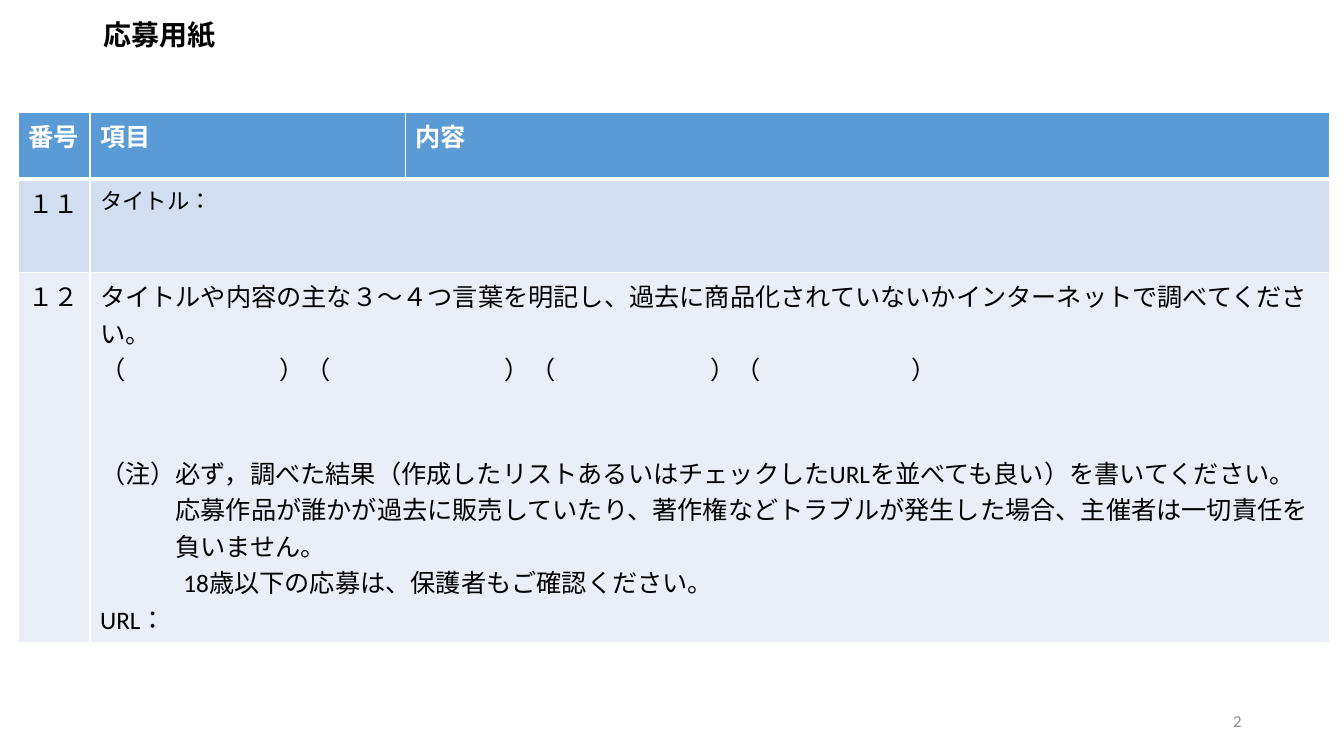
from lxml import etree
from pptx import Presentation
from pptx.dml.color import RGBColor
from pptx.enum.lang import MSO_LANGUAGE_ID
from pptx.enum.text import MSO_ANCHOR, PP_ALIGN
from pptx.oxml.ns import qn
from pptx.util import Cm, Pt

TOP, MIDDLE = MSO_ANCHOR.TOP, MSO_ANCHOR.MIDDLE
LEFT, RIGHT = PP_ALIGN.LEFT, PP_ALIGN.RIGHT
JAPANESE = MSO_LANGUAGE_ID.JAPANESE

HEADINGS = ["番号", "項目", "内容"]
KEYWORD_TABS = [4.53, 10.2, 15.37, 20.45]
KEYWORD_BLANKS = "（\t）" * len(KEYWORD_TABS)
# Text, left indent in cm, space before in points
INSTRUCTIONS = [
    ("タイトルや内容の主な３～４つ言葉を明記し、過去に商品化されていないか"
     "インターネットで調べてください。", 0, 0),
    (KEYWORD_BLANKS, 0, 0),
    ("（注）必ず，調べた結果（作成したリストあるいはチェックしたURLを"
     "並べても良い）を書いてください。", 0, 48),
    ("応募作品が誰かが過去に販売していたり、著作権などトラブルが発生した場合、"
     "主催者は一切責任を", 1.9, 0),
    ("負いません。", 1.9, 0),
    ("18歳以下の応募は、保護者もご確認ください。", 2.1, 0),
    ("URL：", 0, 0),
]


def color(hex_value):
    return RGBColor.from_string(hex_value)


def write(paragraph, text, size, ink="000000", bold=False):
    paragraph.text = text
    for run in paragraph.runs:
        font = run.font
        font.name = "Calibri"
        font.size = Pt(size)
        font.bold = bold
        font.color.rgb = color(ink)
        font.language_id = JAPANESE


def add_label(slide, box, text, size, ink, bold, anchor, align):
    label = slide.shapes.add_textbox(*(Cm(length) for length in box))
    frame = label.text_frame
    frame.word_wrap = True
    frame.vertical_anchor = anchor
    paragraph = frame.paragraphs[0]
    paragraph.alignment = align
    write(paragraph, text, size, ink, bold)
    return paragraph


def fill_cell(cell, fill, text, size=18, ink="000000", bold=False):
    cell.fill.solid()
    cell.fill.fore_color.rgb = color(fill)
    write(cell.text_frame.paragraphs[0], text, size, ink, bold)


def set_borders(cell, top, bottom):
    properties = cell._tc.get_or_add_tcPr()
    sides = [("a:lnL", 1), ("a:lnR", 1), ("a:lnT", top), ("a:lnB", bottom)]
    for position, (side, width) in enumerate(sides):
        line = etree.Element(qn(side), w=str(Pt(width)))
        paint = etree.SubElement(line, qn("a:solidFill"))
        etree.SubElement(paint, qn("a:srgbClr"), val="FFFFFF")
        properties.insert(position, line)


def add_tabs(paragraph, stops):
    tab_list = etree.SubElement(paragraph._p.get_or_add_pPr(), qn("a:tabLst"))
    for stop in stops:
        etree.SubElement(tab_list, qn("a:tab"), pos=str(Cm(stop)), algn="l")


def write_instructions(frame):
    for index, (text, indent, gap) in enumerate(INSTRUCTIONS):
        paragraph = frame.add_paragraph() if index else frame.paragraphs[0]
        if text == KEYWORD_BLANKS:
            add_tabs(paragraph, KEYWORD_TABS)
        if indent:
            paragraph._p.get_or_add_pPr().set("marL", str(Cm(indent)))
        if gap:
            paragraph.space_before = Pt(gap)
        write(paragraph, text, 18)


def add_entry_form(slide, box):
    left, top, width, height = box
    form = slide.shapes.add_table(3, 3, Cm(left), Cm(top), Cm(width), Cm(height)).table
    form.horz_banding = False
    column_widths = [1.8, 7.95, width - 9.75]
    row_heights = [1.68, 2.36, height - 4.04]
    for column, column_width in zip(form.columns, column_widths):
        column.width = Cm(column_width)
    for row, row_height in zip(form.rows, row_heights):
        row.height = Cm(row_height)

    # Header
    for index, heading in enumerate(HEADINGS):
        fill_cell(form.cell(0, index), "5B9BD5", heading, ink="FFFFFF", bold=True)

    # Numbered entries, each spanning the last two columns
    entries = [("１１", "D2DEEF", "タイトル：", 16),
               ("１２", "EAEFF7", INSTRUCTIONS[0][0], 18)]
    for row_index, (number, fill, text, size) in enumerate(entries, 1):
        form.cell(row_index, 1).merge(form.cell(row_index, 2))
        fill_cell(form.cell(row_index, 0), fill, number)
        fill_cell(form.cell(row_index, 1), fill, text, size)
    write_instructions(form.cell(2, 1).text_frame)

    # White grid, heavier under the header
    for row, (above, below) in zip(form.rows, [(1, 3), (3, 1), (1, 1)]):
        for cell in row.cells:
            set_borders(cell, above, below)


def main():
    prs = Presentation()
    prs.slide_width, prs.slide_height = Cm(33.87), Cm(19.05)
    slide = prs.slides.add_slide(prs.slide_layouts[6])

    # Title
    title = add_label(slide, (2.36, 0.41, 31.5, 1.9), "応募用紙", 20,
                      "000000", True, TOP, LEFT)
    title.line_spacing = 0.9

    # Entry form
    add_entry_form(slide, (0.47, 2.83, 33.05, 13.36))

    # Page number
    add_label(slide, (23.92, 17.65, 7.62, 1.02), "2", 12,
              "8C8C8C", False, MIDDLE, RIGHT)

    prs.save("out.pptx")


if __name__ == "__main__":
    main()
